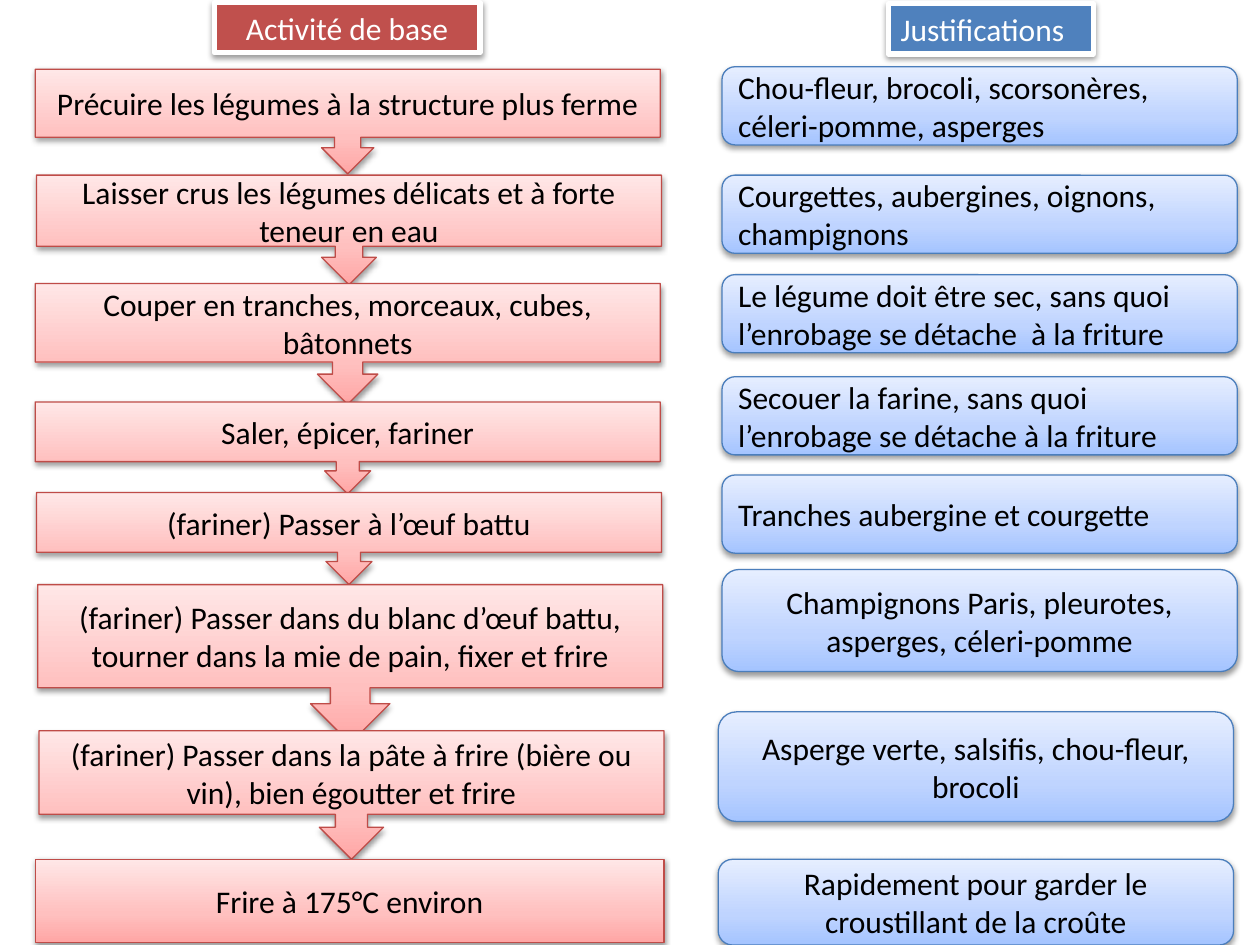
from copy import deepcopy

from lxml import etree
from pptx import Presentation, util as u
from pptx.dml.color import RGBColor
from pptx.enum import shapes, text
from pptx.oxml import ns

COLUMNS, ROWS = 100, 75  # grid of square cells over the slide

COLORS = {
    "black": "000000",
    "white": "FFFFFF",
    "red": "C0504D",
    "blue": "4F81BD",
    "red line": "BF4C48",
    "blue line": "4B7EBC",
}
GRADIENTS = {
    "red": ("FFA6A5", "FFC0BF", "FFE7E7"),
    "blue": ("A4C4FF", "BFD4FF", "E6EEFF"),
}
STOPS = (0, 0.35, 1)

# left, top, height, text
STEPS = [
    (2.8, 5.5, 8.3, "Précuire les légumes à la structure plus ferme"),
    (2.9, 13.9, 8.7, "Laisser crus les légumes délicats et à forte teneur en eau"),
    (2.8, 22.5, 9.6, "Couper en tranches, morceaux, cubes, bâtonnets"),
    (2.8, 31.9, 7.3, "Saler, épicer, fariner"),
    (2.9, 39.1, 7.3, "(fariner) Passer à l’œuf battu"),
    (3.0, 46.4, 12.6, "(fariner) Passer dans du blanc d’œuf battu, "
                      "tourner dans la mie de pain, fixer et frire"),
    (3.1, 58, 10.2, "(fariner) Passer dans la pâte à frire (bière ou vin), "
                    "bien égoutter et frire"),
]

# top, text
SHORT_REASONS = [
    (5.3, "Chou-fleur, brocoli, scorsonères, céleri-pomme, asperges"),
    (13.9, "Courgettes, aubergines, oignons, champignons"),
    (21.8, "Le légume doit être sec, sans quoi l’enrobage se détache  à la friture"),
    (29.9, "Secouer la farine, sans quoi l’enrobage se détache à la friture"),
    (37.7, "Tranches aubergine et courgette"),
]

# left, top, height, text
CENTRED_REASONS = [
    (57.3, 45.2, 8.1, "Champignons Paris, pleurotes, asperges, céleri-pomme"),
    (57, 56.5, 8.7, "Asperge verte, salsifis, chou-fleur, brocoli"),
    (57, 68.2, 6.8, "Rapidement pour garder le croustillant de la croûte"),
]


def write(shape, words, color="black", centred=True, anchor=text.MSO_ANCHOR.MIDDLE):
    frame = shape.text_frame
    frame.word_wrap = True
    frame.vertical_anchor = anchor
    paragraph = frame.paragraphs[0]
    paragraph.alignment = text.PP_ALIGN.CENTER if centred else text.PP_ALIGN.LEFT
    run = paragraph.add_run()
    run.text = words
    run.font.name = "Calibri"
    run.font.size = u.Pt(18)
    run.font.color.rgb = RGBColor.from_string(COLORS[color])


class FlowSlide:
    def __init__(self, presentation):
        self.slide = presentation.slides.add_slide(presentation.slide_layouts[6])
        self.column = presentation.slide_width / COLUMNS
        self.row = presentation.slide_height / ROWS

    def box(self, kind, left, top, width, height, line, line_width):
        shape = self.slide.shapes.add_shape(
            kind, round(left * self.column), round(top * self.row),
            round(width * self.column), round(height * self.row))
        shape.line.color.rgb = RGBColor.from_string(COLORS[line])
        shape.line.width = u.Pt(line_width)
        return shape

    def shadow(self, shape):
        shape.shadow.inherit = False
        effects = shape.element.spPr.find(ns.qn("a:effectLst"))
        shadow = etree.SubElement(effects, ns.qn("a:outerShdw"), blurRad="40000",
                                  dist="20000", dir="5400000", rotWithShape="0")
        color = etree.SubElement(shadow, ns.qn("a:srgbClr"), val=COLORS["black"])
        etree.SubElement(color, ns.qn("a:alpha"), val="38000")

    def gradient(self, shape, name):
        shape.fill.gradient()
        shape.fill.gradient_angle = 90
        stop_list = shape.element.spPr.find(ns.qn("a:gradFill")).find(ns.qn("a:gsLst"))
        stop_list.insert(1, deepcopy(stop_list[0]))
        for stop, position, color in zip(shape.fill.gradient_stops, STOPS, GRADIENTS[name]):
            stop.position = position
            stop.color.rgb = RGBColor.from_string(color)

    def heading(self, left, top, width, words, color, centred):
        shape = self.box(shapes.MSO_SHAPE.RECTANGLE, left, top, width, 4, "white", 3)
        shape.fill.solid()
        shape.fill.fore_color.rgb = RGBColor.from_string(COLORS[color])
        self.shadow(shape)
        write(shape, words, color="white", centred=centred, anchor=text.MSO_ANCHOR.TOP)
        shape.text_frame.auto_size = text.MSO_AUTO_SIZE.SHAPE_TO_FIT_TEXT

    def panel(self, kind, left, top, width, height, words, color, centred=True):
        shape = self.box(kind, left, top, width, height, f"{color} line", 0.75)
        self.gradient(shape, color)
        self.shadow(shape)
        write(shape, words, centred=centred)

    def step(self, left, top, height, words):
        self.panel(shapes.MSO_SHAPE.DOWN_ARROW_CALLOUT, left, top, 49.6, height, words, "red")

    def last_step(self, left, top, height, words):
        self.panel(shapes.MSO_SHAPE.RECTANGLE, left, top, 49.9, height, words, "red")

    def reason(self, left, top, height, words, centred):
        self.panel(shapes.MSO_SHAPE.ROUNDED_RECTANGLE, left, top, 40.9, height, words,
                   "blue", centred)


def main():
    presentation = Presentation()
    presentation.slide_width = u.Inches(10)
    presentation.slide_height = u.Inches(7.5)
    flow = FlowSlide(presentation)

    # Column headings
    flow.heading(17, 0.2, 21.1, "Activité de base", "red", centred=True)
    flow.heading(70.5, 0.3, 16.3, "Justifications", "blue", centred=False)

    # Steps of the activity
    for left, top, height, words in STEPS:
        flow.step(left, top, height, words)
    flow.last_step(2.8, 68.2, 6.6, "Frire à 175°C environ")

    # Reasons beside the steps
    for top, words in SHORT_REASONS:
        flow.reason(57.3, top, 6.2, words, centred=False)
    for left, top, height, words in CENTRED_REASONS:
        flow.reason(left, top, height, words, centred=True)

    presentation.save("out.pptx")


if __name__ == "__main__":
    main()
